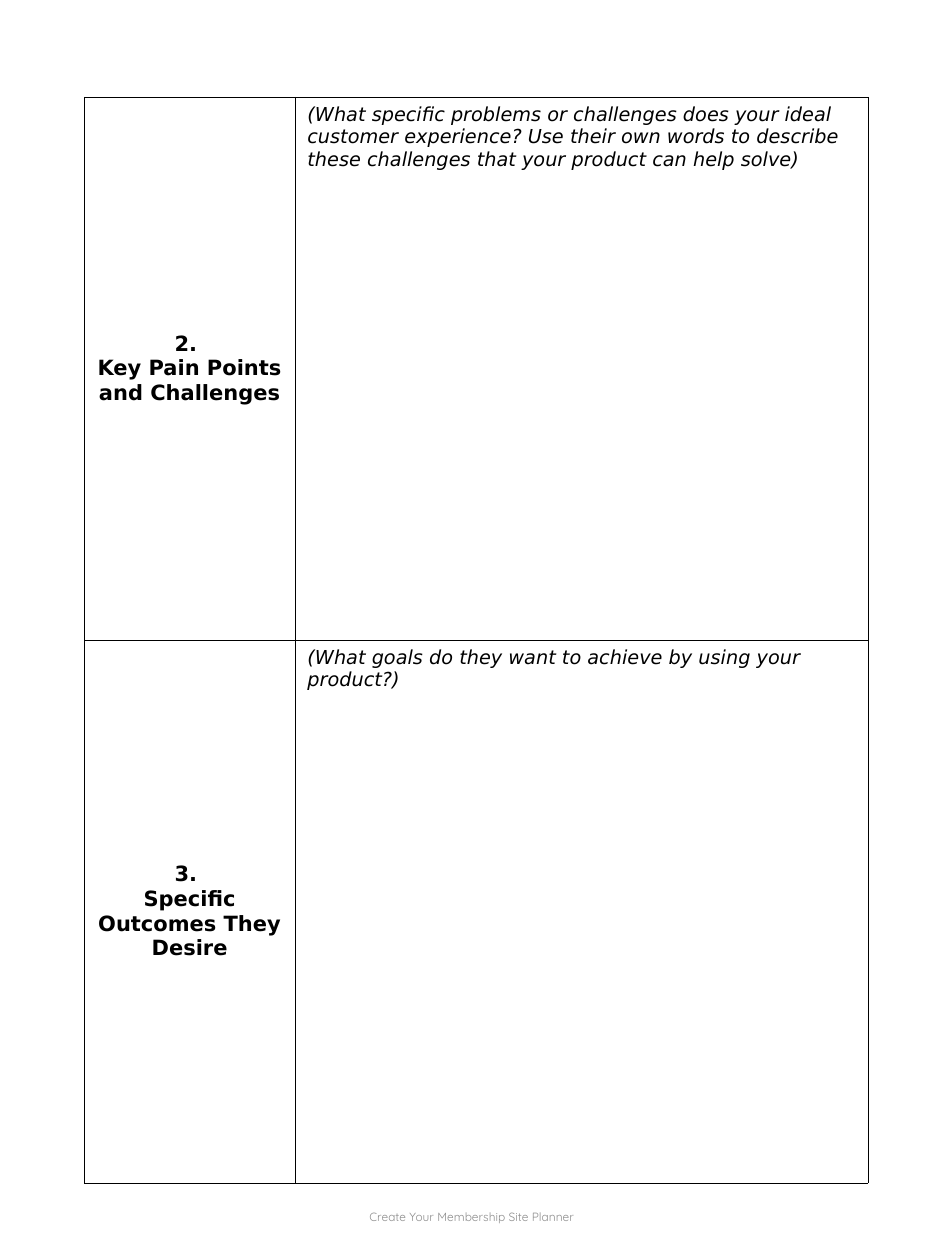
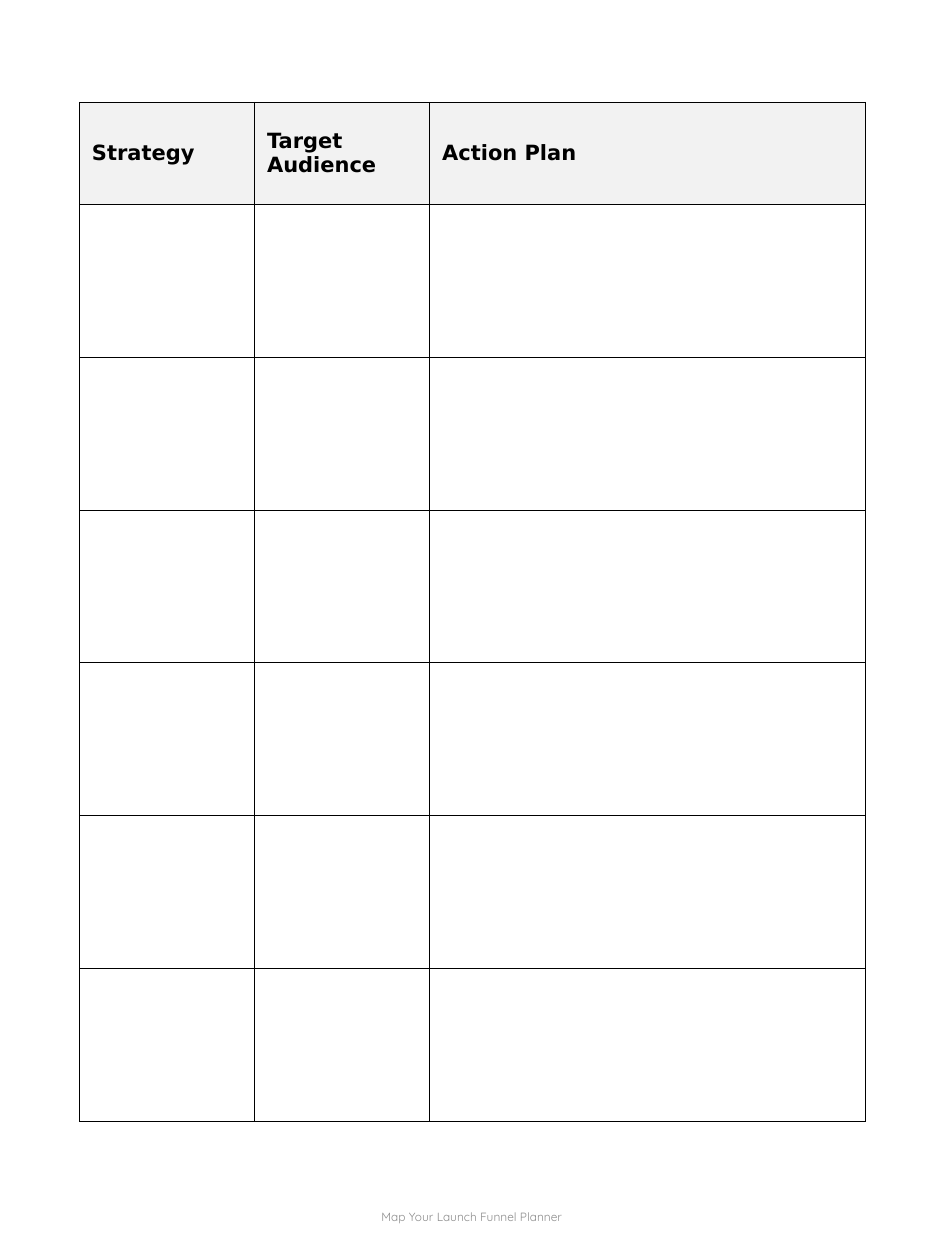
import dataclasses

import lxml.etree
import pptx
import pptx.dml.color
import pptx.enum.text
import pptx.oxml.ns
import pptx.util

ALIGN = pptx.enum.text.PP_ALIGN
ANCHOR = pptx.enum.text.MSO_ANCHOR


@dataclasses.dataclass(frozen=True)
class Theme:
    ink: str = "000000"
    muted: str = "8C8C8C"
    header: str = "F2F2F2"
    page: str = "FFFFFF"
    body_font: str = "DejaVu Sans"
    footer_font: str = "Quicksand"
    heading_size: float = 12
    prompt_size: float = 11
    footer_size: float = 6.8
    border_width: float = 0.25


class Planner:
    COLUMNS = 75
    ROWS = 100

    def __init__(self, theme):
        self.theme = theme
        self.presentation = pptx.Presentation()
        self.presentation.slide_width = pptx.util.Inches(7.5)
        self.presentation.slide_height = pptx.util.Inches(10)
        self.slide = None

    def across(self, columns):
        return round(self.presentation.slide_width * columns / self.COLUMNS)

    def down(self, rows):
        return round(self.presentation.slide_height * rows / self.ROWS)

    def page(self, footer):
        self.slide = self.presentation.slides.add_slide(self.presentation.slide_layouts[6])
        self.paint(self.slide.background.fill, self.theme.page)
        box = self.slide.shapes.add_textbox(
            self.across(24.8), self.down(93.9), self.across(25.3), self.down(5.3))
        box.text_frame.word_wrap = True
        box.text_frame.vertical_anchor = ANCHOR.MIDDLE
        self.set_text(box.text_frame, [footer], self.theme.footer_size, self.theme.muted,
                      font=self.theme.footer_font, align=ALIGN.CENTER)

    def paint(self, fill, color):
        fill.solid()
        fill.fore_color.rgb = pptx.dml.color.RGBColor.from_string(color)

    def set_text(self, frame, lines, size, color, font=None, align=ALIGN.LEFT,
                 bold=False, italic=False):
        for index, line in enumerate(lines):
            paragraph = frame.add_paragraph() if index else frame.paragraphs[0]
            paragraph.text = line
            paragraph.alignment = align
            paragraph.font.name = font or self.theme.body_font
            paragraph.font.size = pptx.util.Pt(size)
            paragraph.font.bold = bold
            paragraph.font.italic = italic
            paragraph.font.color.rgb = pptx.dml.color.RGBColor.from_string(color)

    def table(self, left, top, widths, heights):
        table = self.slide.shapes.add_table(
            len(heights), len(widths), self.across(left), self.down(top),
            self.across(sum(widths)), self.down(sum(heights))).table
        table.first_row = False
        table.horz_banding = False
        for column, width in zip(table.columns, widths):
            column.width = self.across(width)
        for row, height in zip(table.rows, heights):
            row.height = self.down(height)
        for cell in table.iter_cells():
            self.border(cell)
            cell.fill.background()
        return table

    def border(self, cell):
        qualified = pptx.oxml.ns.qn
        properties = cell._tc.get_or_add_tcPr()
        for side in ("a:lnL", "a:lnR", "a:lnT", "a:lnB"):
            line = lxml.etree.SubElement(properties, qualified(side))
            line.set("w", str(pptx.util.Pt(self.theme.border_width)))
            solid = lxml.etree.SubElement(line, qualified("a:solidFill"))
            lxml.etree.SubElement(solid, qualified("a:srgbClr")).set("val", self.theme.ink)

    def heading(self, cell, lines, align=ALIGN.LEFT):
        cell.vertical_anchor = ANCHOR.MIDDLE
        self.set_text(cell.text_frame, lines, self.theme.heading_size, self.theme.ink,
                      align=align, bold=True)

    def prompt(self, cell, text):
        self.set_text(cell.text_frame, [text], self.theme.prompt_size, self.theme.ink,
                      italic=True)

    def question_table(self, questions):
        table = self.table(6.7, 7.7, [16.7, 45.5], [43.1] * len(questions))
        for row, (number, topic, prompt) in enumerate(questions):
            self.heading(table.cell(row, 0), [number, topic], ALIGN.CENTER)
            self.prompt(table.cell(row, 1), prompt)

    def worksheet_table(self, titles, blank_rows):
        table = self.table(6.3, 8.1, [13.9, 13.9, 34.6], [8.1] + [12.13] * blank_rows)
        for column, title in enumerate(titles):
            cell = table.cell(0, column)
            self.heading(cell, [title])
            self.paint(cell.fill, self.theme.header)


def main():
    planner = Planner(Theme())
    planner.page("Create Your Membership Site Planner")
    planner.question_table([
        ("2. ", "Key Pain Points and Challenges",
         "(What specific problems or challenges does your ideal customer experience? "
         "Use their own words to describe these challenges that your product can help solve)"),
        ("3. ", "Specific Outcomes They Desire",
         "(What goals do they want to achieve by using your product?)"),
    ])
    planner.page("Map Your Launch Funnel Planner")
    planner.worksheet_table(["Strategy", "Target Audience", "Action Plan"], blank_rows=6)
    planner.presentation.save("out.pptx")


if __name__ == "__main__":
    main()
